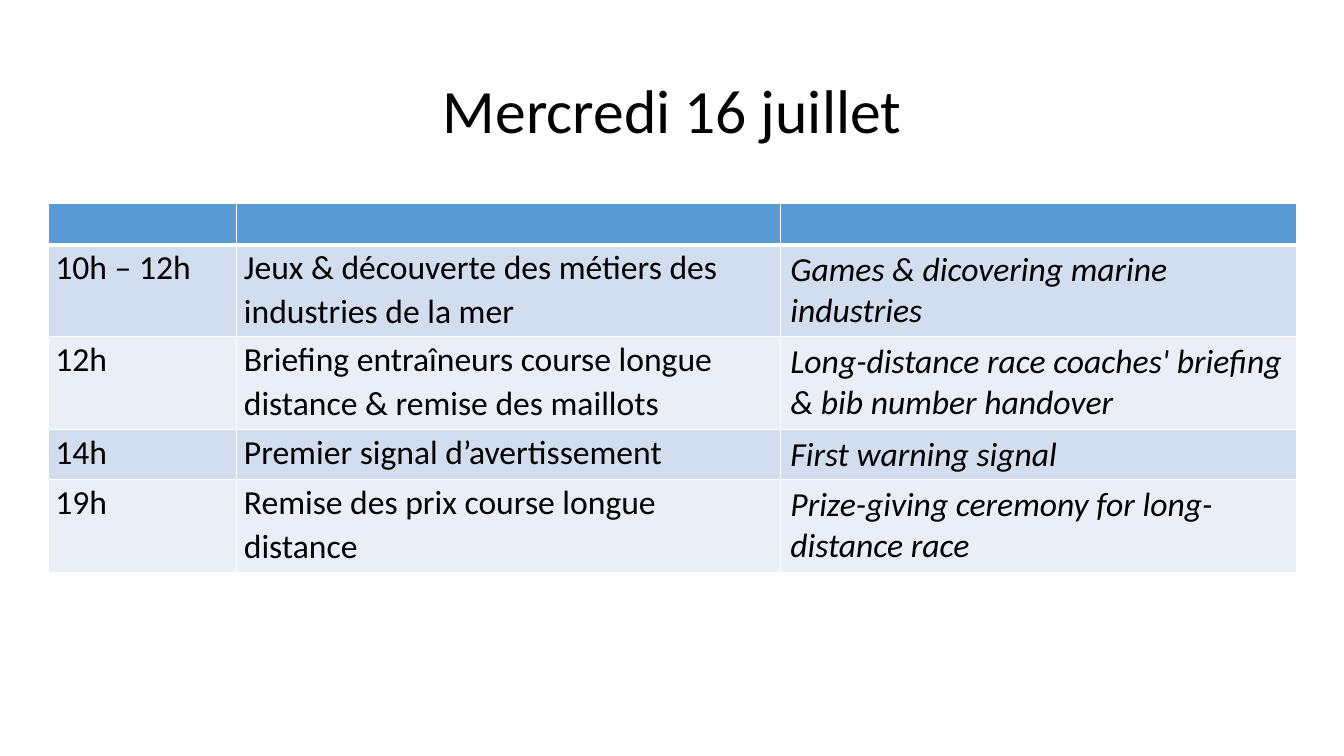
import dataclasses

import lxml.etree
import pptx
import pptx.dml.color
import pptx.enum.text
import pptx.oxml.ns
import pptx.presentation
import pptx.slide
import pptx.table
import pptx.text.text
import pptx.util

Inches = pptx.util.Inches
Pt = pptx.util.Pt
RGBColor = pptx.dml.color.RGBColor

BLACK = RGBColor(0x00, 0x00, 0x00)
WHITE = RGBColor(0xFF, 0xFF, 0xFF)
BLUE = RGBColor(0x5B, 0x9B, 0xD5)
BANDS = (RGBColor(0xD2, 0xDE, 0xEF), RGBColor(0xEA, 0xEF, 0xF7))
FONT = "Calibri"
WIDTHS = (1.87, 5.39, 5.12)
HEIGHTS = (0.41, 0.91, 0.92, 0.5, 0.92)


@dataclasses.dataclass(frozen=True)
class Event:
    time: str
    french: str
    english: str


EVENTS = (
    Event("10h – 12h", "Jeux & découverte des métiers des industries de la mer",
          "Games & dicovering marine industries"),
    Event("12h", "Briefing entraîneurs course longue distance & remise des maillots",
          "Long-distance race coaches' briefing & bib number handover"),
    Event("14h", "Premier signal d’avertissement", "First warning signal"),
    Event("19h", "Remise des prix course longue distance",
          "Prize-giving ceremony for long-distance race"),
)


def style(para: pptx.text.text._Paragraph, size: int, italic: bool = False) -> None:
    for run in para.runs:
        run.font.name = FONT
        run.font.size = Pt(size)
        run.font.bold = False
        run.font.italic = italic
        run.font.color.rgb = BLACK


def border(cell: pptx.table._Cell, top: int, bottom: int) -> None:
    props = cell._tc.get_or_add_tcPr()
    qn = pptx.oxml.ns.qn
    for side, width in (("L", 1), ("R", 1), ("T", top), ("B", bottom)):
        line = lxml.etree.SubElement(props, qn(f"a:ln{side}"), w=str(Pt(width)))
        fill = lxml.etree.SubElement(line, qn("a:solidFill"))
        lxml.etree.SubElement(fill, qn("a:srgbClr"), val=str(WHITE))


def paint(cell: pptx.table._Cell, color: RGBColor) -> None:
    cell.fill.solid()
    cell.fill.fore_color.rgb = color


def write(cell: pptx.table._Cell, text: str, italic: bool) -> None:
    cell.text_frame.text = text
    para = cell.text_frame.paragraphs[0]
    style(para, 24, italic)
    if not italic:
        para.line_spacing = 1.07
        cell.margin_left = cell.margin_right = Inches(0.07)
        cell.margin_top = cell.margin_bottom = 0


def add_title(slide: pptx.slide.Slide, text: str) -> None:
    box = slide.shapes.add_textbox(Inches(0.92), Inches(0.4), Inches(11.5), Inches(1.45))
    frame = box.text_frame
    frame.word_wrap = True
    frame.vertical_anchor = pptx.enum.text.MSO_ANCHOR.MIDDLE
    frame.text = text
    para = frame.paragraphs[0]
    para.alignment = pptx.enum.text.PP_ALIGN.CENTER
    para.line_spacing = 0.9
    style(para, 44)


def add_plan(slide: pptx.slide.Slide, events: tuple[Event, ...]) -> None:
    table = slide.shapes.add_table(
        len(HEIGHTS), len(WIDTHS), Inches(0.48), Inches(2.02),
        Inches(sum(WIDTHS)), Inches(sum(HEIGHTS))).table
    for col, width in zip(table.columns, WIDTHS):
        col.width = Inches(width)
    for row, height in zip(table.rows, HEIGHTS):
        row.height = Inches(height)

    # Empty header band with a thick rule below
    for cell in table.rows[0].cells:
        border(cell, 1, 3)
        paint(cell, BLUE)

    # Events: English in italics
    for index, event in enumerate(events):
        texts = dataclasses.astuple(event)
        for col, text in enumerate(texts):
            cell = table.cell(index + 1, col)
            border(cell, 3 if index == 0 else 1, 1)
            paint(cell, BANDS[index % 2])
            write(cell, text, italic=col == 2)


def main() -> None:
    deck = pptx.Presentation()
    deck.slide_width = Inches(13.33)
    deck.slide_height = Inches(7.5)
    slide = deck.slides.add_slide(deck.slide_layouts[6])
    add_title(slide, "Mercredi 16 juillet")
    add_plan(slide, EVENTS)
    deck.save("out.pptx")


if __name__ == "__main__":
    main()
